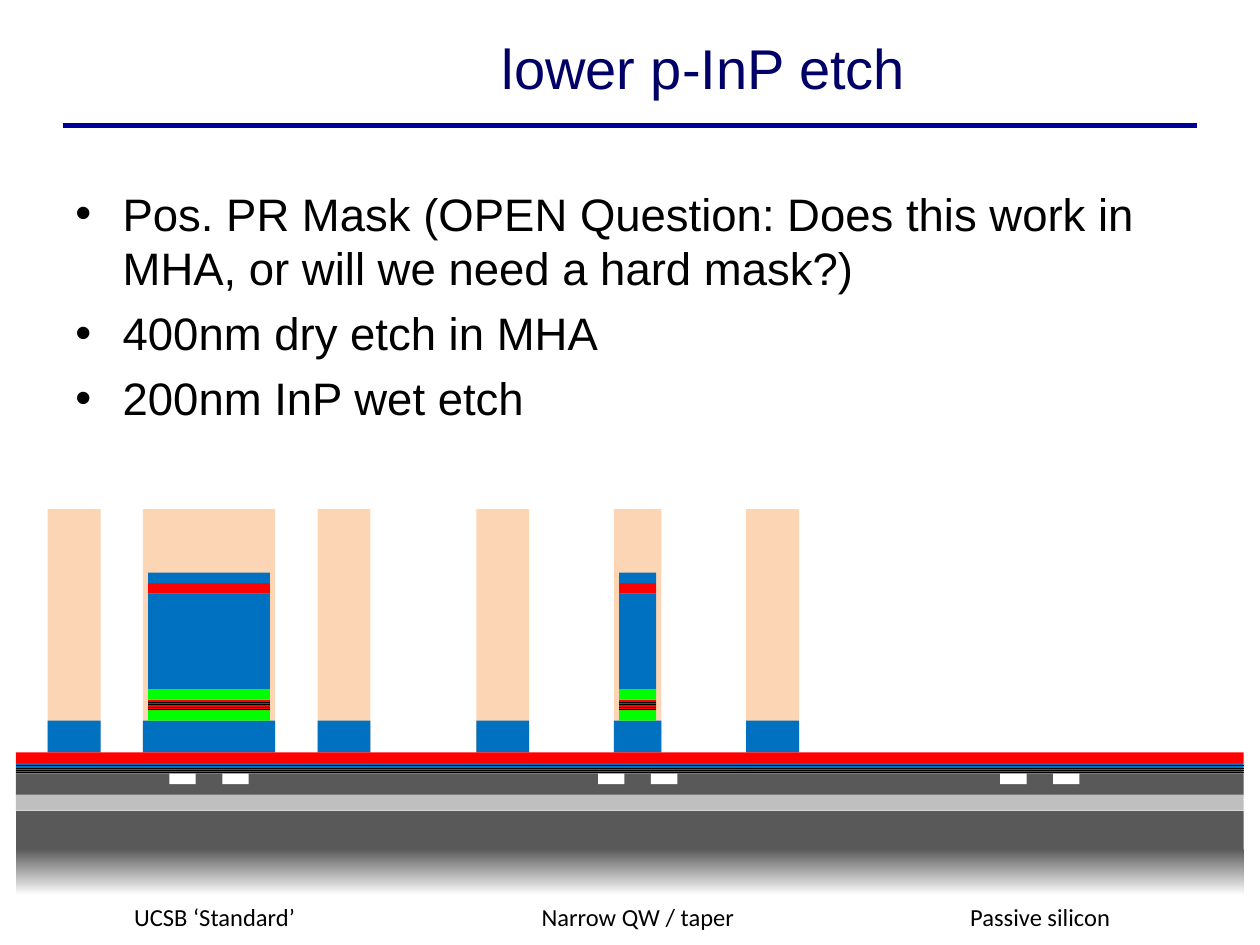
from pptx import Presentation
from pptx.dml.color import RGBColor
from pptx.enum.dml import MSO_PATTERN
from pptx.enum.shapes import MSO_CONNECTOR, MSO_SHAPE
from pptx.enum.text import MSO_ANCHOR, MSO_AUTO_SIZE, PP_ALIGN
from pptx.oxml.ns import qn
from pptx.util import Inches, Pt
from lxml.etree import SubElement

UNIT = 0.042            # one grid column or row, in inches
BASE = 6.14             # top of the silicon: row 0, rows count downwards
BLUE, RED, GREEN = "0070C0", "FF0000", "00FF00"
RESIST, SILICON, OXIDE = "FCD5B5", "595959", "BFBFBF"
WHITE, BLACK, NAVY, RULE = "FFFFFF", "000000", "000066", "000099"


def rgb(code):
    return RGBColor.from_string(code)


class Deck:
    def __init__(self):
        self.prs = Presentation()
        self.prs.slide_width, self.prs.slide_height = Inches(10), Inches(7.5)
        self.slide = self.prs.slides.add_slide(self.prs.slide_layouts[5])

    def share(self, x, y):
        """Turn shares of the slide's width and height into lengths."""
        return int(self.prs.slide_width * x), int(self.prs.slide_height * y)

    def grid(self, col, row, cols, rows):
        """Turn a box of grid cells into left, top, width and height."""
        return (Inches(col * UNIT), Inches(BASE + row * UNIT),
                Inches(cols * UNIT), Inches(rows * UNIT))

    def style(self, par, size, face, color):
        for run in par.runs:
            run.font.size, run.font.name = Pt(size), face
            run.font.color.rgb = rgb(color)

    def title(self, text, x, y, w, h):
        box = self.slide.shapes.title
        box.left, box.top = self.share(x, y)
        box.width, box.height = self.share(w, h)
        frame = box.text_frame
        frame.text = text
        frame.vertical_anchor = MSO_ANCHOR.MIDDLE
        frame.paragraphs[0].alignment = PP_ALIGN.CENTER
        self.style(frame.paragraphs[0], 32, "Arial", NAVY)

    def rule(self, x, y, end):
        line = self.slide.shapes.add_connector(
            MSO_CONNECTOR.STRAIGHT, *self.share(x, y), *self.share(end, y))
        line.line.color.rgb, line.line.width = rgb(RULE), Pt(3)
        SubElement(line._element.spPr, qn("a:effectLst"))

    def bullets(self, items, x, y, w, h):
        box = self.slide.shapes.add_textbox(*self.share(x, y), *self.share(w, h))
        frame = box.text_frame
        frame.word_wrap = True
        for i, item in enumerate(items):
            par = frame.add_paragraph() if i else frame.paragraphs[0]
            par.text = item
            if i:
                par.space_before = Pt(6)
            props = par._p.get_or_add_pPr()
            props.set("marL", str(Inches(0.375)))
            props.set("indent", str(-Inches(0.375)))
            SubElement(props, qn("a:buFont"), typeface="Arial")
            SubElement(props, qn("a:buChar"), char="•")
            self.style(par, 26, "Arial", BLACK)

    def label(self, text, col, row, cols):
        box = self.slide.shapes.add_textbox(*self.grid(col, row, cols, 8))
        frame = box.text_frame
        frame.text = text
        frame.word_wrap = False
        frame.auto_size = MSO_AUTO_SIZE.SHAPE_TO_FIT_TEXT
        self.style(frame.paragraphs[0], 14, "Calibri", BLACK)

    def block(self, color, col, row, cols, rows):
        shape = self.slide.shapes.add_shape(
            MSO_SHAPE.RECTANGLE, *self.grid(col, row, cols, rows))
        shape.shadow.inherit = False
        shape.line.fill.background()
        shape.fill.solid()
        shape.fill.fore_color.rgb = rgb(color)
        return shape

    def wells(self, color, *cells):
        """Draw a block striped with thin black lines."""
        fill = self.block(color, *cells).fill
        fill.patterned()
        fill.pattern = MSO_PATTERN.LIGHT_HORIZONTAL
        fill.fore_color.rgb, fill.back_color.rgb = rgb(BLACK), rgb(color)

    def fade(self, color, *cells):
        """Draw a block that fades to white at its foot."""
        fill = self.block(color, *cells).fill
        fill.gradient()
        fill.gradient_angle = 270
        for stop, (place, tint) in zip(fill.gradient_stops,
                                       ((0.45, color), (1, WHITE))):
            stop.position, stop.color.rgb = place, rgb(tint)

    def mesa(self, col, cols):
        """Stack the etched layers from the bottom up."""
        row = -10
        for color, rows in ((GREEN, 2), (None, 2), (GREEN, 2),
                            (BLUE, 18), (RED, 2), (BLUE, 2)):
            row -= rows
            if color:
                self.block(color, col, row, cols, rows)
            else:
                self.wells(RED, col, row, cols, rows)


def main():
    deck = Deck()
    deck.rule(0.05, 0.133, 0.95)
    deck.title("lower p-InP etch", 0.167, 0.01, 0.783, 0.123)
    deck.bullets(["Pos. PR Mask (OPEN Question: Does this work in MHA, "
                  "or will we need a hard mask?)",
                  "400nm dry etch in MHA",
                  "200nm InP wet etch"], 0.05, 0.19, 0.9, 0.7)

    posts = ((9, 10), (27, 25), (60, 10), (90, 10), (116, 9), (141, 10))
    for col, cols in posts:
        deck.block(RESIST, col, -50, cols, 46)
        deck.block(BLUE, col, -10, cols, 6)
    for col, cols in ((28, 23), (117, 7)):
        deck.mesa(col, cols)

    left, wide = 3, 232
    deck.block(RED, left, -4, wide, 2)
    deck.wells(BLUE, left, -2, wide, 2)
    deck.block(SILICON, left, 0, wide, 4)
    deck.block(OXIDE, left, 4, wide, 3)
    deck.fade(SILICON, left, 7, wide, 16)
    for col in (32, 113, 189):
        for step in (0, 10):
            deck.block(WHITE, col + step, 0, 5, 2)

    for text, col, cols in (("UCSB ‘Standard’", 23, 35.5),
                            ("Narrow QW / taper", 100, 41.5),
                            ("Passive silicon", 181, 31.5)):
        deck.label(text, col, 23, cols)
    deck.prs.save("out.pptx")


if __name__ == "__main__":
    main()
